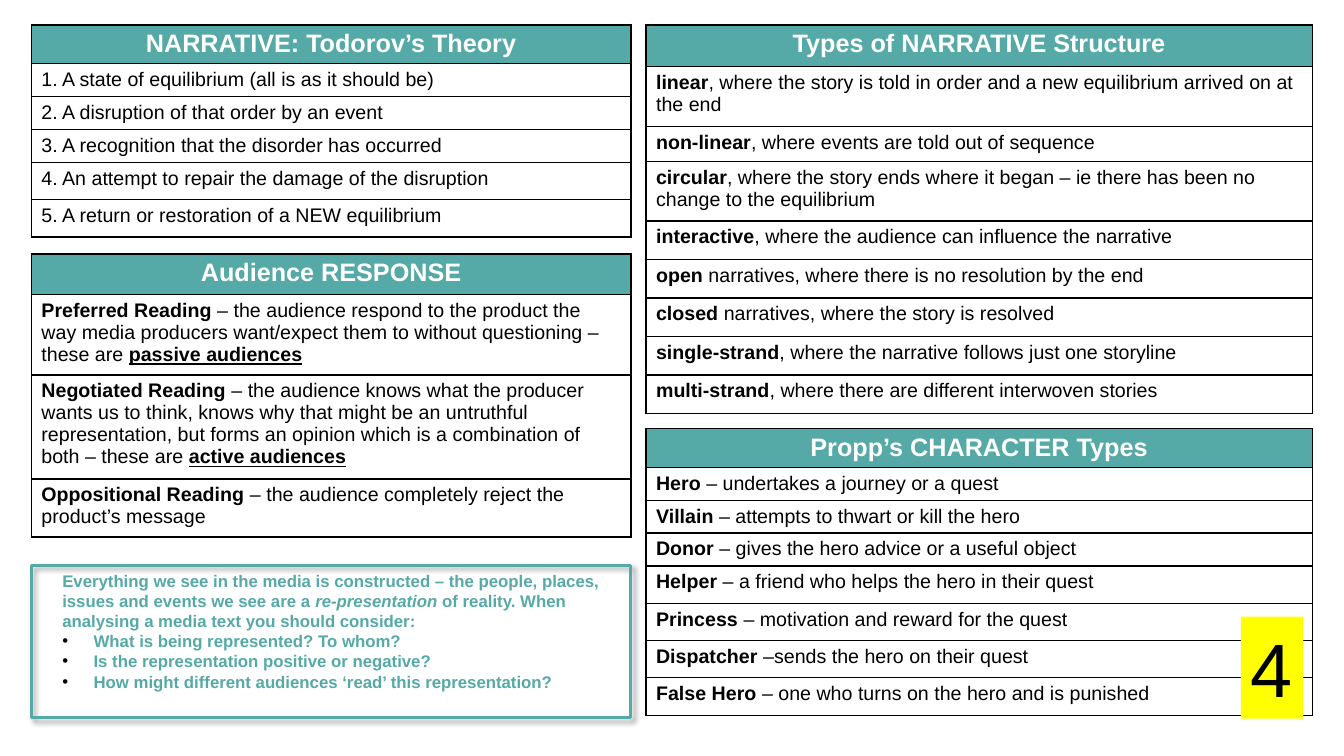
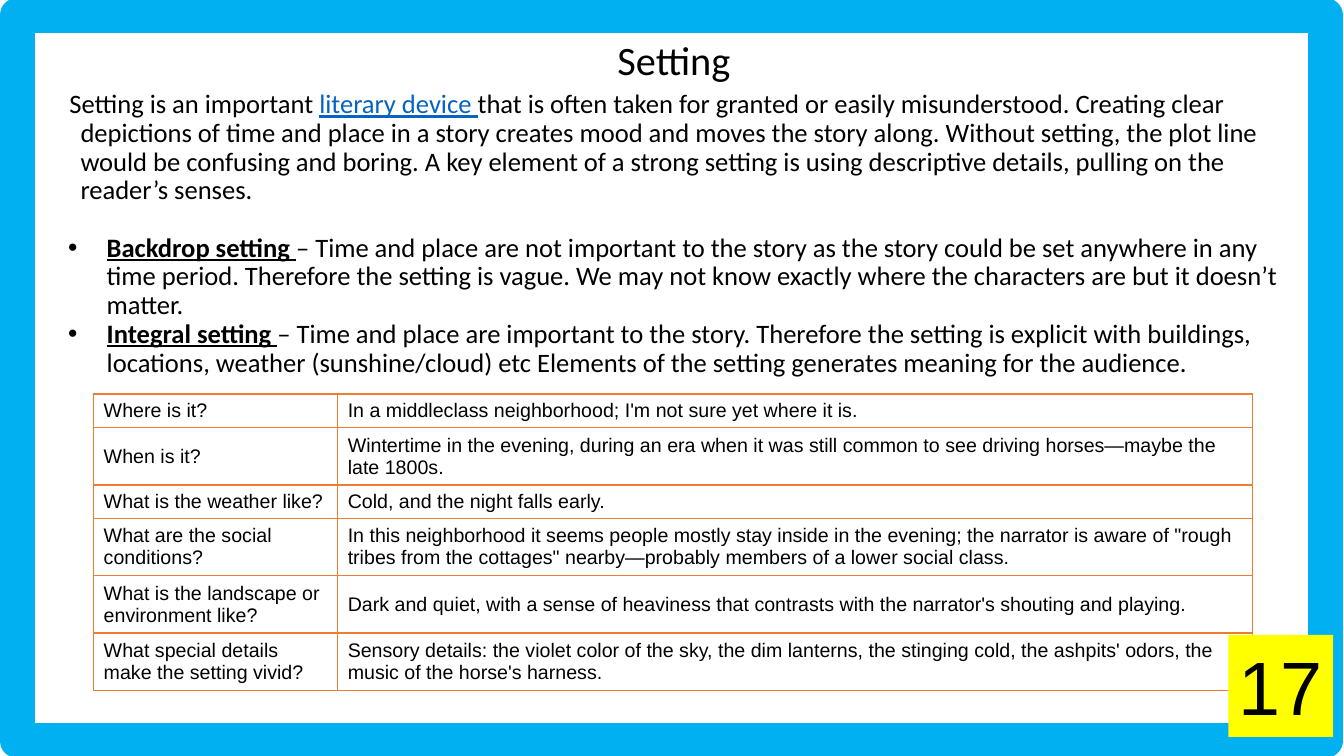
"""Builds two revision slides on narrative theory and setting."""
from lxml.etree import SubElement as Sub
from pptx import Presentation
from pptx.dml.color import RGBColor as Rgb
from pptx.enum.shapes import MSO_SHAPE as Form
from pptx.enum.text import MSO_ANCHOR as Anchor, PP_ALIGN as Align
from pptx.oxml.ns import qn
from pptx.util import Cm, Pt

HUES = {
    "teal": "55A9A7", "black": "000000", "white": "FFFFFF", "yellow": "FFFF00",
    "blue": "00B0F0", "link": "0563C1", "orange": "ED7D31",
}
LEFT, RIGHT = (0.79, 15.11), (16.28, 16.79)

TODOROV = [
    [("1. A state of equilibrium (all is as it should be)", "")],
    [("2. A disruption of that order by an event", "")],
    [("3. A recognition that the disorder has occurred", "")],
    [("4. An attempt to repair the damage of the disruption", "")],
    [("5. A return or restoration of a NEW equilibrium", "")],
]
AUDIENCE = [
    [("Preferred Reading", "b"),
     (" – the audience respond to the product the way media producers want/expect "
      "them to without questioning – these are ", ""),
     ("passive audiences", "bu")],
    [("Negotiated Reading", "b"),
     (" – the audience knows what the producer wants us to think, knows why that might "
      "be an untruthful representation, but forms an opinion which is a combination of "
      "both – these are ", ""),
     ("active audiences", "bu")],
    [("Oppositional Reading", "b"),
     (" – the audience completely reject the product’s message", "")],
]
TYPES = [
    [("linear", "b"),
     (", where the story is told in order and a new equilibrium arrived on at the end", "")],
    [("non-linear", "b"), (", where events are told out of sequence", "")],
    [("circular", "b"),
     (", where the story ends where it began – ie there has been no change to the "
      "equilibrium", "")],
    [("interactive", "b"), (", where the audience can influence the narrative", "")],
    [("open", "b"), (" narratives, where there is no resolution by the end", "")],
    [("closed", "b"), (" narratives, where the story is resolved", "")],
    [("single-strand", "b"), (", where the narrative follows just one storyline", "")],
    [("multi-strand", "b"), (", where there are different interwoven stories", "")],
]
PROPP = [
    [("Hero ", "b"), ("– undertakes a journey or a quest", "")],
    [("Villain", "b"), (" – attempts to thwart or kill the hero", "")],
    [("Donor", "b"), (" – gives the hero advice or a useful object", "")],
    [("Helper", "b"), (" – a friend who helps the hero in their quest", "")],
    [("Princess ", "b"), ("– motivation and reward for the quest", "")],
    [("Dispatcher", "b"), (" –sends the hero on their quest", "")],
    [("False Hero ", "b"), ("– one who turns on the hero and is punished", "")],
]
ADVICE = [
    ("Everything we see in the media is constructed – the people, places, issues and "
     "events we see are a ", "b"),
    ("re-presentation", "bi"),
    (" of reality. When analysing a media text you should consider:", "b"),
]
ASKS = [
    "What is being represented? To whom?",
    "Is the representation positive or negative?",
    "How might different audiences ‘read’ this representation?",
]
INTRO = [
    ("Setting is an important ", ""),
    ("literary device ", "ul"),
    ("that is often taken for granted or easily misunderstood. Creating clear depictions "
     "of time and place in a story creates mood and moves the story along. Without "
     "setting, the plot line would be confusing and boring. A key element of a strong "
     "setting is using descriptive details, pulling on the reader’s senses.", ""),
]
KINDS = [
    [("Backdrop setting ", "bu"),
     ("– Time and place are not important to the story as the story could be set anywhere "
      "in any time period. Therefore the setting is vague. We may not know exactly where "
      "the characters are but it doesn’t matter.", "")],
    [("Integral setting ", "bu"),
     ("– Time and place are important to the story. Therefore the setting is explicit with "
      "buildings, locations, weather (sunshine/cloud) etc Elements of the setting "
      "generates meaning for the audience.", "")],
]
SCENE = [
    ("Where is it?", "In a middleclass neighborhood; I'm not sure yet where it is."),
    ("When is it?", "Wintertime in the evening, during an era when it was still common to "
     "see driving horses—maybe the late 1800s."),
    ("What is the weather like?", "Cold, and the night falls early."),
    ("What are the social conditions?", "In this neighborhood it seems people mostly stay "
     "inside in the evening; the narrator is aware of \"rough tribes from the cottages\" "
     "nearby—probably members of a lower social class."),
    ("What is the landscape or environment like?", "Dark and quiet, with a sense of "
     "heaviness that contrasts with the narrator's shouting and playing."),
    ("What special details make the setting vivid?", "Sensory details: the violet color of "
     "the sky, the dim lanterns, the stinging cold, the ashpits' odors, the music of the "
     "horse's harness."),
]


def tint(name):
    return Rgb.from_string(HUES[name])


def write(par, runs, size, hue="black", face="Arial"):
    for text, marks in runs:
        run = par.add_run()
        run.text = text
        font = run.font
        font.size, font.name = Pt(size), face
        font.bold, font.italic = "b" in marks, "i" in marks
        font.underline = "u" in marks
        font.color.rgb = tint("link" if "l" in marks else hue)


def indent(par, edge, first):
    props = par._p.get_or_add_pPr()
    props.set("marL", str(Cm(edge)))
    props.set("indent", str(Cm(first)))
    return props


def bullet(par, edge, first):
    props = indent(par, edge, first)
    Sub(Sub(props, qn("a:buClr")), qn("a:srgbClr"), val=HUES["black"])
    Sub(props, qn("a:buFont"), typeface="Arial")
    Sub(props, qn("a:buChar"), char="•")


def edge(cell, hue):
    props = cell._tc.get_or_add_tcPr()
    for side in ("lnL", "lnR", "lnT", "lnB"):
        line = Sub(props, qn("a:" + side), w=str(Pt(1)))
        Sub(Sub(line, qn("a:solidFill")), qn("a:srgbClr"), val=HUES[hue])


def paint(cell, line, fill):
    edge(cell, line)
    cell.fill.solid()
    cell.fill.fore_color.rgb = tint(fill)


def grid(slide, x, y, cols, rows):
    table = slide.shapes.add_table(
        len(rows), len(cols), Cm(x), Cm(y), Cm(sum(cols)), Cm(sum(rows))).table
    table.first_row = table.horz_banding = False
    for col, wide in zip(table.columns, cols):
        col.width = Cm(wide)
    for row, high in zip(table.rows, rows):
        row.height = Cm(high)
    return table


def panel(slide, side, y, title, items, rows):
    x, wide = side
    table = grid(slide, x, y, [wide], rows)
    head = table.cell(0, 0)
    paint(head, "black", "teal")
    par = head.text_frame.paragraphs[0]
    par.alignment = Align.CENTER
    write(par, [(title, "b")], 18, "white")
    for num, runs in enumerate(items, 1):
        cell = table.cell(num, 0)
        paint(cell, "black", "white")
        write(cell.text_frame.paragraphs[0], runs, 14)


def facts(slide):
    table = grid(slide, 2.36, 9.93, [6.15, 23.06], [0.82, 1.36, 0.82, 1.36, 1.36, 1.36])
    for row, pair in enumerate(SCENE):
        for col, text in enumerate(pair):
            cell = table.cell(row, col)
            paint(cell, "orange", "white")
            cell.vertical_anchor = Anchor.MIDDLE
            write(cell.text_frame.paragraphs[0], [(text, "")], 14)


def block(slide, x, y, wide, high):
    frame = slide.shapes.add_textbox(Cm(x), Cm(y), Cm(wide), Cm(high)).text_frame
    frame.word_wrap = True
    return frame


def box(slide, x, y, wide, high):
    shape = slide.shapes.add_shape(Form.RECTANGLE, Cm(x), Cm(y), Cm(wide), Cm(high))
    shape.shadow.inherit = False
    return shape


def border(slide, x, y, wide, high, hue, weight):
    shape = box(slide, x, y, wide, high)
    shape.fill.background()
    shape.line.color.rgb = tint(hue)
    shape.line.width = Pt(weight)
    return shape


def shade(shape):
    fx = shape._element.spPr.find(qn("a:effectLst"))
    drop = Sub(fx, qn("a:outerShdw"), blurRad=str(Pt(4)), dist=str(Pt(3)),
               dir="2700000", algn="tl", rotWithShape="0")
    Sub(Sub(drop, qn("a:srgbClr"), val=HUES["black"]), qn("a:alpha"), val="40000")


def badge(slide, x, y, wide, text):
    shape = box(slide, x, y, wide, 2.57)
    shape.fill.solid()
    shape.fill.fore_color.rgb = tint("yellow")
    shape.line.fill.background()
    frame = shape.text_frame
    frame.word_wrap = False
    frame.vertical_anchor = Anchor.TOP
    par = frame.paragraphs[0]
    par.alignment = Align.CENTER
    write(par, [(text, "")], 54)


def advice(slide):
    frame = block(slide, 1.32, 14.25, 14.58, 3.33)
    write(frame.paragraphs[0], ADVICE, 12, "teal")
    for text in ASKS:
        par = frame.add_paragraph()
        bullet(par, 0.79, -0.79)
        write(par, [(text, "b")], 12, "teal")
    shade(border(slide, LEFT[0], 14.25, LEFT[1], 3.84, "teal", 2))


def lesson(slide):
    frame = block(slide, 0.97, 0.86, 32.03, 1.45)
    frame.vertical_anchor = Anchor.MIDDLE
    par = frame.paragraphs[0]
    par.alignment, par.line_spacing = Align.CENTER, 0.9
    write(par, [("Setting", "")], 28.8, face="Calibri")
    frame = block(slide, 1.14, 2.16, 31.67, 3.33)
    par = frame.paragraphs[0]
    par.line_spacing = 0.9
    indent(par, 0.64, -0.28)
    write(par, INTRO, 19, face="Calibri")
    for runs, gap in zip(KINDS, (20.5, 0)):
        par = frame.add_paragraph()
        par.line_spacing, par.space_before = 0.9, Pt(gap)
        bullet(par, 1.3, -0.97)
        write(par, runs, 19, face="Calibri")


def main():
    deck = Presentation()
    deck.slide_width, deck.slide_height = Cm(33.87), Cm(19.05)
    blank = deck.slide_layouts[6]

    slide = deck.slides.add_slide(blank)
    panel(slide, LEFT, 0.63, "NARRATIVE: Todorov’s Theory", TODOROV,
          [0.98, 0.83, 0.82, 0.83, 0.94, 0.94])
    panel(slide, RIGHT, 0.63, "Types of NARRATIVE Structure", TYPES,
          [1.05, 1.5, 0.89, 1.5] + [0.97] * 5)
    panel(slide, RIGHT, 10.8, "Propp’s CHARACTER Types", PROPP,
          [0.98, 0.83, 0.82, 0.83] + [0.94] * 4)
    panel(slide, LEFT, 6.4, "Audience RESPONSE", AUDIENCE, [1.03, 2.02, 2.62, 1.46])
    advice(slide)
    badge(slide, 31.27, 15.54, 1.57, "4")

    slide = deck.slides.add_slide(blank)
    lesson(slide)
    border(slide, 0.43, 0.38, 32.97, 18.29, "blue", 25)
    facts(slide)
    badge(slide, 30.96, 16, 2.64, "17")
    deck.save("out.pptx")


if __name__ == "__main__":
    main()
